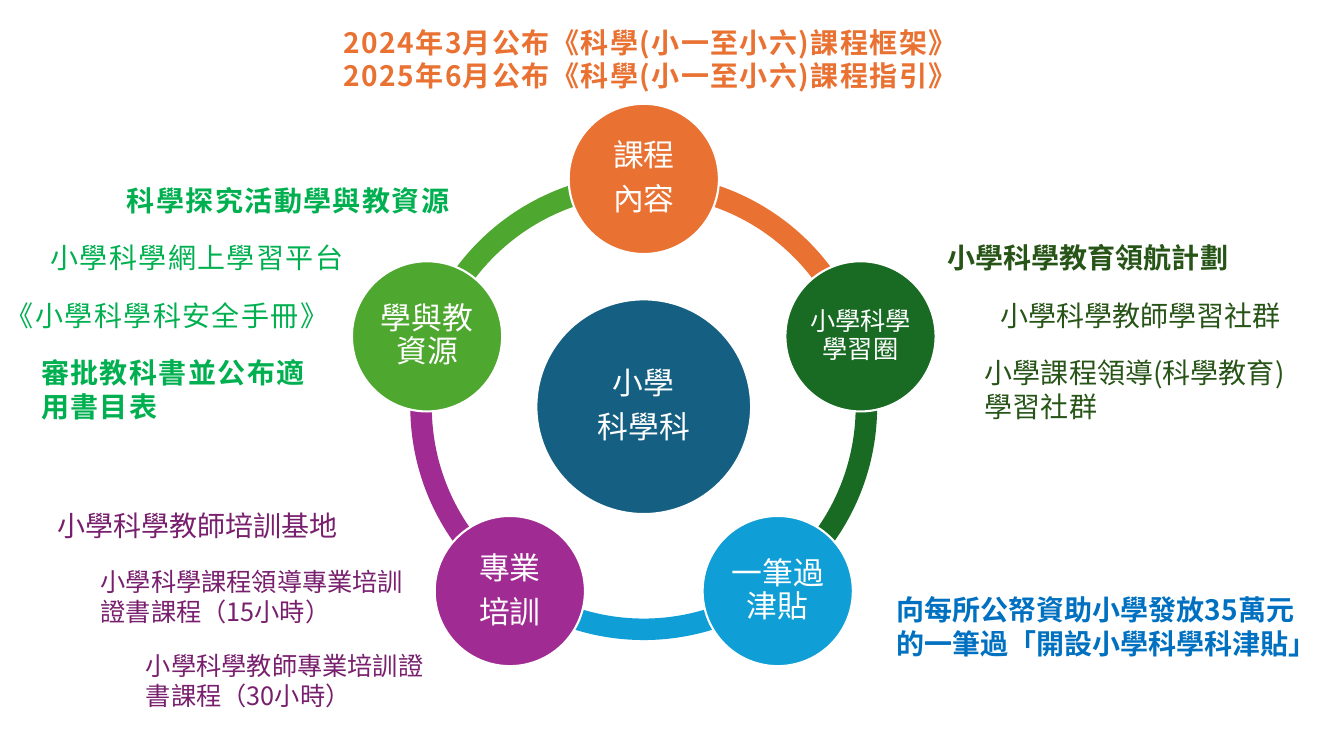
"""Build the primary science curriculum slide with a five-part ring."""
import math

from pptx import Presentation, util as u
from pptx.dml.color import RGBColor
from pptx.enum import shapes, text
from pptx.oxml.ns import qn
from lxml import etree

WHITE = RGBColor(0xFF, 0xFF, 0xFF)
TEAL = RGBColor(0x15, 0x60, 0x82)
ORANGE = RGBColor(0xE9, 0x71, 0x32)
FOREST = RGBColor(0x19, 0x6B, 0x24)
SKY = RGBColor(0x0F, 0x9E, 0xD5)
PURPLE = RGBColor(0xA0, 0x2B, 0x93)
GREEN = RGBColor(0x4E, 0xA7, 0x2E)
PLUM = RGBColor(0x78, 0x20, 0x6E)
EMERALD = RGBColor(0x00, 0xB0, 0x50)
MOSS = RGBColor(0x27, 0x54, 0x17)
BLUE = RGBColor(0x00, 0x70, 0xC0)

SANS = "Noto Sans CJK SC"
SANS_TC = "Noto Sans CJK TC"
CENTER_X, CENTER_Y = 6.385, 4.035
ORBIT, RING_SIZE, NODE_SIZE, HUB_SIZE = 2.26, 4.63, 1.49, 2.13

NODES = [
    ("課程\n內容", 22, ORANGE),
    ("小學科學學習圈", 18, FOREST),
    ("一筆過津貼", 22, SKY),
    ("專業\n培訓", 22, PURPLE),
    ("學與教資源", 22, GREEN),
]

NOTES = [
    ("小學科學教師培訓基地", (0.47, 5, 3.01, 0.44), PLUM, {"font": "Karla"}),
    ("小學科學課程領導專業培訓證書課程（15小時）", (0.9, 5.57, 3.32, 0.71), PLUM, {"size": 18}),
    ("小學科學教師專業培訓證書課程（30小時）", (1.35, 6.4, 3.06, 0.71), PLUM,
     {"size": 18, "font": SANS_TC}),
    ("科學探究活動學與教資源", (1.16, 1.77, 3.44, 0.44), EMERALD, {"bold": True, "spacing": 1}),
    ("小學科學網上學習平台", (0.4, 2.34, 3.15, 0.44), EMERALD, {"spacing": 1}),
    ("《小學科學科安全手冊》", (-0.04, 2.91, 3.44, 0.44), EMERALD, {"spacing": 1}),
    ("審批教科書並公布適用書目表", (0.31, 3.48, 3, 0.77), EMERALD, {"bold": True, "spacing": 1}),
    ("小學科學教育領航計劃", (9.3, 2.34, 3.9, 0.44), MOSS, {"bold": True}),
    ("小學科學教師學習社群", (9.82, 2.91, 3.01, 0.44), MOSS, {}),
    ("小學課程領導(科學教育)學習社群", (9.67, 3.48, 3.41, 0.77), MOSS, {}),
    ("向每所公帑資助小學發放35萬元的一筆過「開設小學科學科津貼」", (8.79, 5.83, 4.41, 0.77), BLUE,
     {"bold": True}),
]


class SlideBuilder:
    def __init__(self, presentation):
        self.slide = presentation.slides.add_slide(presentation.slide_layouts[5])

    def format_text(self, frame, color, size=20, font=SANS, bold=False, spacing=0):
        for paragraph in frame.paragraphs:
            for run in paragraph.runs:
                run.font.name = font
                run.font.size = u.Pt(size)
                run.font.bold = bold
                run.font.color.rgb = color
                properties = run.font._element
                east_asian = etree.SubElement(properties, qn("a:ea"))
                east_asian.set("typeface", font if "CJK" in font else SANS)
                if spacing:
                    properties.set("spc", str(spacing * 100))

    def title(self, words, box, color):
        shape = self.slide.shapes.title
        shape.left, shape.top, shape.width, shape.height = map(u.Inches, box)
        frame = shape.text_frame
        frame.text = words
        frame.auto_size = text.MSO_AUTO_SIZE.NONE
        frame.vertical_anchor = text.MSO_ANCHOR.TOP
        for paragraph in frame.paragraphs:
            paragraph.alignment = text.PP_ALIGN.LEFT
        self.format_text(frame, color, bold=True, spacing=1)

    def note(self, words, box, color, style):
        frame = self.slide.shapes.add_textbox(*map(u.Inches, box)).text_frame
        frame.word_wrap = True
        frame.text = words
        self.format_text(frame, color, **style)

    def centered_shape(self, kind, x, y, size, color):
        shape = self.slide.shapes.add_shape(
            kind, u.Inches(x - size / 2), u.Inches(y - size / 2), u.Inches(size), u.Inches(size))
        shape.shadow.inherit = False
        shape.fill.solid()
        shape.fill.fore_color.rgb = color
        shape.line.fill.background()
        return shape

    def arc(self, start, end, color):
        shape = self.centered_shape(
            shapes.MSO_SHAPE.BLOCK_ARC, CENTER_X, CENTER_Y, RING_SIZE, color)
        for index, value in enumerate((start % 360 * 0.6, end % 360 * 0.6, 0.046)):
            shape.adjustments[index] = value

    def circle(self, words, x, y, diameter, color, size=22):
        shape = self.centered_shape(shapes.MSO_SHAPE.OVAL, x, y, diameter, color)
        shape.line.color.rgb = WHITE
        shape.line.width = u.Pt(1.5)
        frame = shape.text_frame
        frame.margin_left = frame.margin_right = u.Inches(0.02)
        frame.margin_top = frame.margin_bottom = u.Inches(0.03)
        frame.vertical_anchor = text.MSO_ANCHOR.MIDDLE
        frame.word_wrap = True
        frame.text = words
        for paragraph in frame.paragraphs:
            paragraph.alignment = text.PP_ALIGN.CENTER
            paragraph.line_spacing = 0.9
            paragraph.space_after = u.Pt(size * 0.35)
        self.format_text(frame, WHITE, size)


def main():
    presentation = Presentation()
    presentation.slide_width = u.Inches(13.33)
    presentation.slide_height = u.Inches(7.5)
    builder = SlideBuilder(presentation)

    angles = [270 + 72 * index for index in range(len(NODES))]
    for angle, (_, _, color) in zip(angles, NODES):
        builder.arc(angle, angle + 72, color)
    builder.circle("小學\n科學科", CENTER_X, CENTER_Y, HUB_SIZE, TEAL)
    for angle, (words, size, color) in zip(angles, NODES):
        x = CENTER_X + ORBIT * math.cos(math.radians(angle))
        y = CENTER_Y + ORBIT * math.sin(math.radians(angle))
        builder.circle(words, x, y, NODE_SIZE, color, size)

    for words, box, color, style in NOTES:
        builder.note(words, box, color, style)
    builder.title("2024年3月公布《科學(小一至小六)課程框架》\n2025年6月公布《科學(小一至小六)課程指引》",
                  (3.31, 0.2, 7.12, 0.77), ORANGE)
    presentation.save("out.pptx")


if __name__ == "__main__":
    main()
